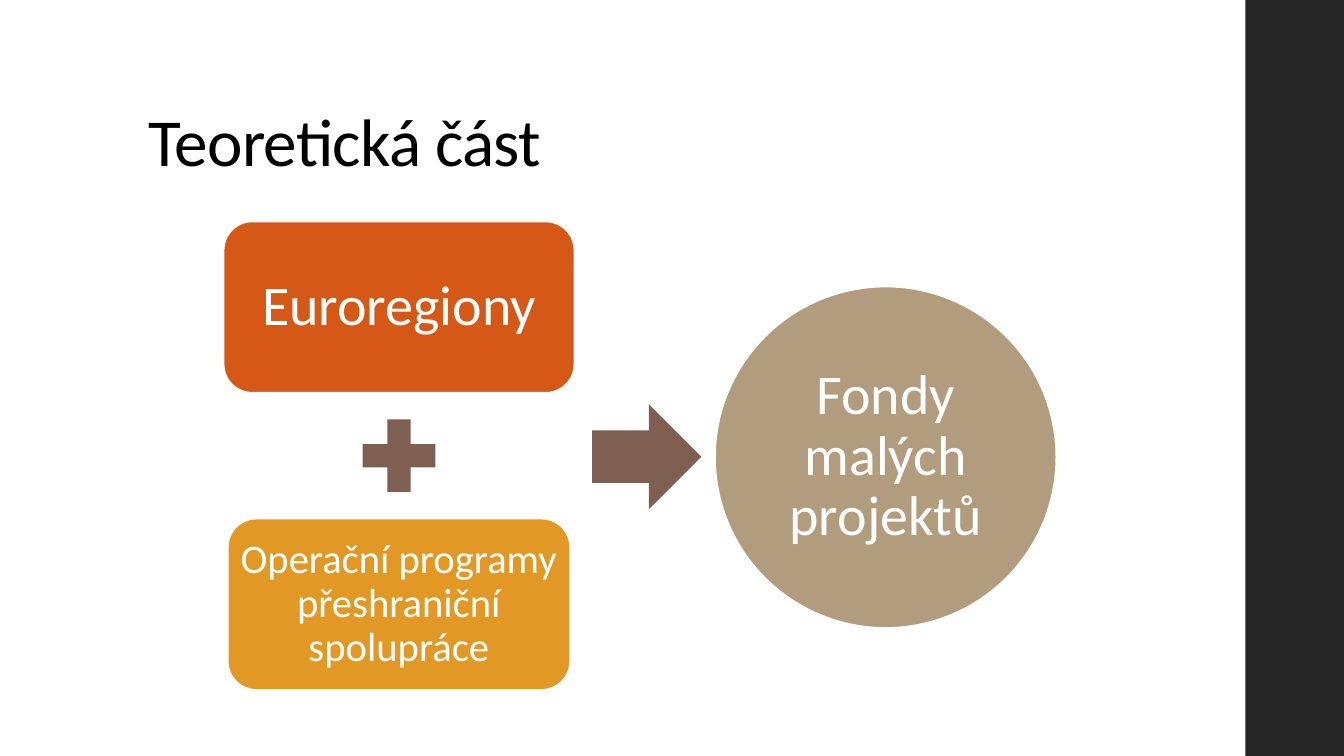
from dataclasses import dataclass

from pptx import Presentation
from pptx.dml.color import RGBColor
from pptx.enum.shapes import MSO_SHAPE
from pptx.enum.text import MSO_ANCHOR, MSO_AUTO_SIZE, PP_ALIGN
from pptx.util import Emu, Pt

PX = 9525  # 96 px to the inch
FONT = "Calibri"
COLORS = {
    "bar": "262626",
    "black": "000000",
    "white": "FFFFFF",
    "orange": "D55816",
    "amber": "E19825",
    "sand": "B19C7D",
    "brown": "7F5F52",
}
RECT = MSO_SHAPE.RECTANGLE
ROUND = MSO_SHAPE.ROUNDED_RECTANGLE
PLUS = MSO_SHAPE.MATH_PLUS
ARROW = MSO_SHAPE.RIGHT_ARROW
OVAL = MSO_SHAPE.OVAL
MIDDLE = MSO_ANCHOR.MIDDLE
BOTTOM = MSO_ANCHOR.BOTTOM
CENTER = PP_ALIGN.CENTER
LEFT = PP_ALIGN.LEFT
NO_FIT = MSO_AUTO_SIZE.NONE


@dataclass
class Node:
    kind: int
    left: int
    top: int
    width: int
    height: int
    color: str
    text: str = ""
    size: int = 40
    inset: int = 6


NODES = [
    Node(RECT, 1186, 0, 96, 720, "bar"),
    Node(ROUND, 213, 211, 334, 163, "orange", "Euroregiony"),
    Node(PLUS, 333, 387, 94, 94, "brown"),
    Node(ROUND, 217, 494, 326, 163, "amber",
         "Operační programy přeshraniční spolupráce", 29, 3),
    Node(ARROW, 564, 385, 104, 100, "brown"),
    Node(OVAL, 681, 273, 325, 325, "sand", "Fondy malých projektů"),
]


def px(count: int) -> Emu:
    return Emu(count * PX)


def rgb(name: str) -> RGBColor:
    return RGBColor.from_string(COLORS[name])


def write(frame, text: str, size: int, color: str, align, anchor):
    frame.word_wrap = True
    frame.auto_size = NO_FIT
    frame.vertical_anchor = anchor
    para = frame.paragraphs[0]
    para.alignment = align
    para.line_spacing = 0.9
    run = para.add_run()
    run.text = text
    run.font.name = FONT
    run.font.size = Pt(size)
    run.font.color.rgb = rgb(color)
    return run


def draw(slide, node: Node) -> None:
    shape = slide.shapes.add_shape(
        node.kind, px(node.left), px(node.top), px(node.width), px(node.height))
    shape.shadow.inherit = False
    shape.fill.solid()
    shape.fill.fore_color.rgb = rgb(node.color)
    if not node.text:
        shape.line.fill.background()
        return
    shape.line.color.rgb = rgb("white")
    shape.line.width = Pt(1.1)
    frame = shape.text_frame
    frame.margin_left = frame.margin_right = px(node.inset)
    frame.margin_top = frame.margin_bottom = px(node.inset)
    write(frame, node.text, node.size, "white", CENTER, MIDDLE)


def main() -> None:
    deck = Presentation()
    deck.slide_width, deck.slide_height = px(1280), px(720)
    slide = deck.slides.add_slide(deck.slide_layouts[5])

    # Title
    title = slide.shapes.title
    title.left, title.top = px(132), px(38)
    title.width, title.height = px(1018), px(139)
    run = write(title.text_frame, "Teoretická část", 48, "black", LEFT, BOTTOM)
    run.font._element.set("spc", "-50")

    # Side bar and diagram
    for node in NODES:
        draw(slide, node)

    deck.save("out.pptx")


if __name__ == "__main__":
    main()
